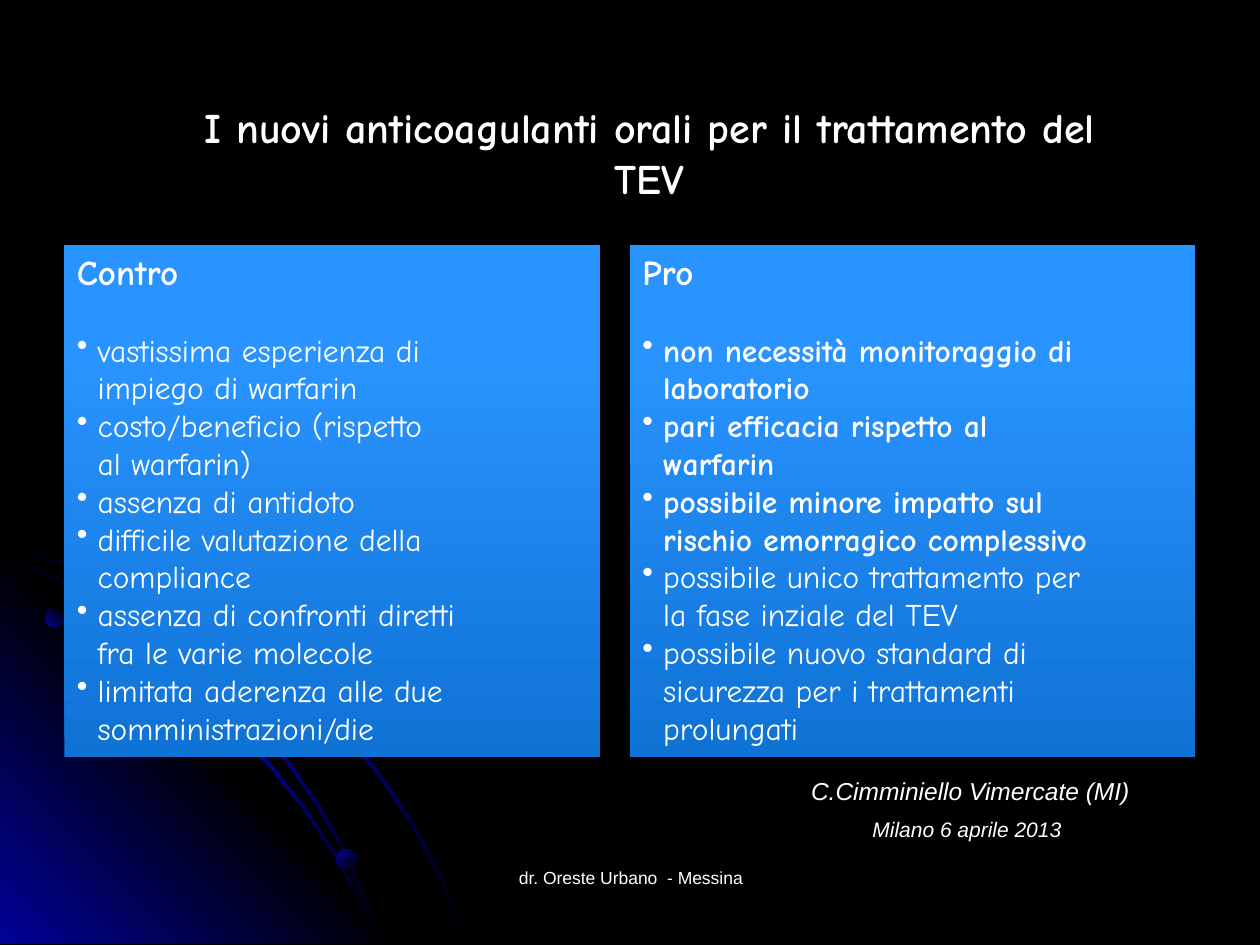
import pptx
import pptx.dml.color
import pptx.enum.shapes
import pptx.enum.text
import pptx.oxml
import pptx.oxml.ns
import pptx.util
from dataclasses import dataclass

Cm = pptx.util.Cm
Pt = pptx.util.Pt
qn = pptx.oxml.ns.qn
ALIGN = pptx.enum.text.PP_ALIGN
SHAPE = pptx.enum.shapes.MSO_SHAPE


@dataclass(frozen=True)
class Theme:
    black: str = "000000"
    white: str = "FFFFFF"
    navy: str = "010199"
    panel: tuple = ((0, "0F72D5"), (80, "2994FF"), (100, "2B95FF"))
    hand: str = "Comic Neue"
    sans: str = "Arial"
    title: int = 24
    heading: int = 20
    body: int = 18
    author: int = 14
    date: int = 12
    footer: int = 10


theme = Theme()

PANELS = [
    (1.3, 10.8, "Contro", [
        (False, ["vastissima esperienza di", "impiego di warfarin"]),
        (False, ["costo/beneficio (rispetto", "al warfarin)"]),
        (False, ["assenza di antidoto"]),
        (False, ["difficile valutazione della", "compliance"]),
        (False, ["assenza di confronti diretti", "fra le varie molecole"]),
        (False, ["limitata aderenza alle due", "somministrazioni/die"]),
    ]),
    (12.7, 11.4, "Pro", [
        (True, ["non necessità monitoraggio di", "laboratorio"]),
        (True, ["pari efficacia rispetto al", "warfarin"]),
        (True, ["possibile minore impatto sul", "rischio emorragico complessivo"]),
        (False, ["possibile unico trattamento per", "la fase inziale del TEV"]),
        (False, ["possibile nuovo standard di", "sicurezza per i trattamenti", "prolungati"]),
    ]),
]
PANEL_TOP, PANEL_HEIGHT, HANG = 4.93, 10.34, 0.42

LABELS = [
    ("dr. Oreste Urbano  - Messina", (8.69, 17.35, 8.05, 1.27), ALIGN.CENTER,
     dict(font=theme.sans, size=theme.footer)),
    ("I nuovi anticoagulanti orali per il trattamento del TEV", (3.1, 1.93, 19.99, 2.31),
     ALIGN.CENTER, dict(font=theme.hand, size=theme.title, bold=True)),
    ("C.Cimminiello Vimercate (MI)", (16.1, 15.52, 7.8, 0.86), ALIGN.LEFT,
     dict(font=theme.sans, size=theme.author, italic=True)),
    ("Milano 6 aprile 2013", (16.89, 16.33, 5.21, 0.76), ALIGN.CENTER,
     dict(font=theme.sans, size=theme.date, italic=True)),
]

FLOOR, STROKE = 19.03, 0.05
GLOW = [(0, 10.85), (8.18, FLOOR), (0, FLOOR)]
ARCS = [
    [(0, 11.05), (0.71, 11.2), (1.45, 11.35), (2.49, 11.66), (3.45, 12.12),
     (4.42, 12.62), (5.31, 13.23), (6.15, 13.92), (6.91, 14.68), (7.62, 15.52),
     (8.26, 16.46), (8.61, 17.09), (8.94, 17.73), (9.2, 18.36), (9.45, FLOOR)],
    [(0, 12.07), (1.04, 12.4), (2.01, 12.83), (2.97, 13.36), (3.86, 13.94),
     (4.67, 14.63), (5.46, 15.39), (6.15, 16.26), (6.76, 17.17), (7.26, 18.08),
     (7.52, 18.54), (7.7, FLOOR)],
    [(0, 11.23), (0.99, 11.56), (1.93, 12.01), (2.82, 12.52), (3.66, 13.11),
     (4.45, 13.79), (5.18, 14.55), (5.82, 15.32), (6.45, 16.23), (6.83, 16.89),
     (7.16, 17.6), (7.47, 18.29), (7.7, FLOOR)],
]
DOTS = [(0.91, 12.27, 0.38, 45), (6.78, 17.12, 0.41, 315)]


def paint(s, stops, angle):
    s.shadow.inherit = False
    s.line.fill.background()
    s.fill.gradient()
    s.fill.gradient_angle = angle
    stop_list = s._element.spPr.find(qn("a:gradFill")).find(qn("a:gsLst"))
    for old in list(stop_list):
        stop_list.remove(old)
    for position, color in stops:
        stop = pptx.oxml.parse_xml(
            f'<a:gs {pptx.oxml.ns.nsdecls("a")} pos="{position * 1000}">'
            f'<a:srgbClr val="{color}"/></a:gs>')
        stop_list.append(stop)


def outline(slide, points, stops, angle):
    corners = [(Cm(x), Cm(y)) for x, y in points]
    builder = slide.shapes.build_freeform(*corners[0])
    builder.add_line_segments(corners[1:], close=True)
    paint(builder.convert_to_shape(), stops, angle)


def add_run(p, text, font, size, bold=False, italic=False):
    r = p.add_run()
    r.text = text
    r.font.name = font
    r.font.size = Pt(size)
    r.font.bold = bold
    r.font.italic = italic
    r.font.color.rgb = pptx.dml.color.RGBColor.from_string(theme.white)


def add_bullet(p):
    props = p._p.get_or_add_pPr()
    props.set("marL", str(Cm(HANG)))
    props.set("indent", str(-Cm(HANG)))
    props.append(pptx.oxml.parse_xml(
        f'<a:buChar {pptx.oxml.ns.nsdecls("a")} char="•"/>'))


def add_backdrop(slide):
    streak = [(0, theme.black), (50, theme.navy), (100, theme.black)]
    glow = [(0, theme.navy), (50, theme.black), (100, theme.navy)]
    for index, edge in enumerate(ARCS):
        inner = [(max(x - STROKE, 0), min(y + STROKE, FLOOR)) for x, y in reversed(edge)]
        outline(slide, edge + inner, streak, 315)
        if index == 0:
            outline(slide, GLOW, glow, 45)
    for x, y, size, angle in DOTS:
        s = slide.shapes.add_shape(SHAPE.OVAL, Cm(x), Cm(y), Cm(size), Cm(size))
        paint(s, [(0, theme.navy), (100, theme.black)], angle)


def add_panel(slide, left, width, heading, items):
    s = slide.shapes.add_shape(
        SHAPE.RECTANGLE, Cm(left), Cm(PANEL_TOP), Cm(width), Cm(PANEL_HEIGHT))
    paint(s, theme.panel, 90)
    tf = s.text_frame
    tf.word_wrap = True
    tf.vertical_anchor = pptx.enum.text.MSO_ANCHOR.TOP
    p = tf.paragraphs[0]
    p.alignment = ALIGN.LEFT
    p.space_after = Pt(21.6)
    add_run(p, heading, theme.hand, theme.heading, bold=True)
    for bold, lines in items:
        p = tf.add_paragraph()
        p.alignment = ALIGN.LEFT
        add_bullet(p)
        for index, line in enumerate(lines):
            if index:
                p.add_line_break()
            add_run(p, line, theme.hand, theme.body, bold=bold)


def add_label(slide, text, box, alignment, style):
    s = slide.shapes.add_textbox(*map(Cm, box))
    tf = s.text_frame
    tf.word_wrap = True
    p = tf.paragraphs[0]
    p.alignment = alignment
    add_run(p, text, **style)


def main():
    prs = pptx.Presentation()
    prs.slide_width, prs.slide_height = Cm(25.4), Cm(19.05)
    slide = prs.slides.add_slide(prs.slide_layouts[6])
    slide.background.fill.solid()
    slide.background.fill.fore_color.rgb = pptx.dml.color.RGBColor.from_string(theme.black)
    add_backdrop(slide)
    for panel in PANELS:
        add_panel(slide, *panel)
    for label in LABELS:
        add_label(slide, *label)
    prs.save("out.pptx")


if __name__ == "__main__":
    main()
